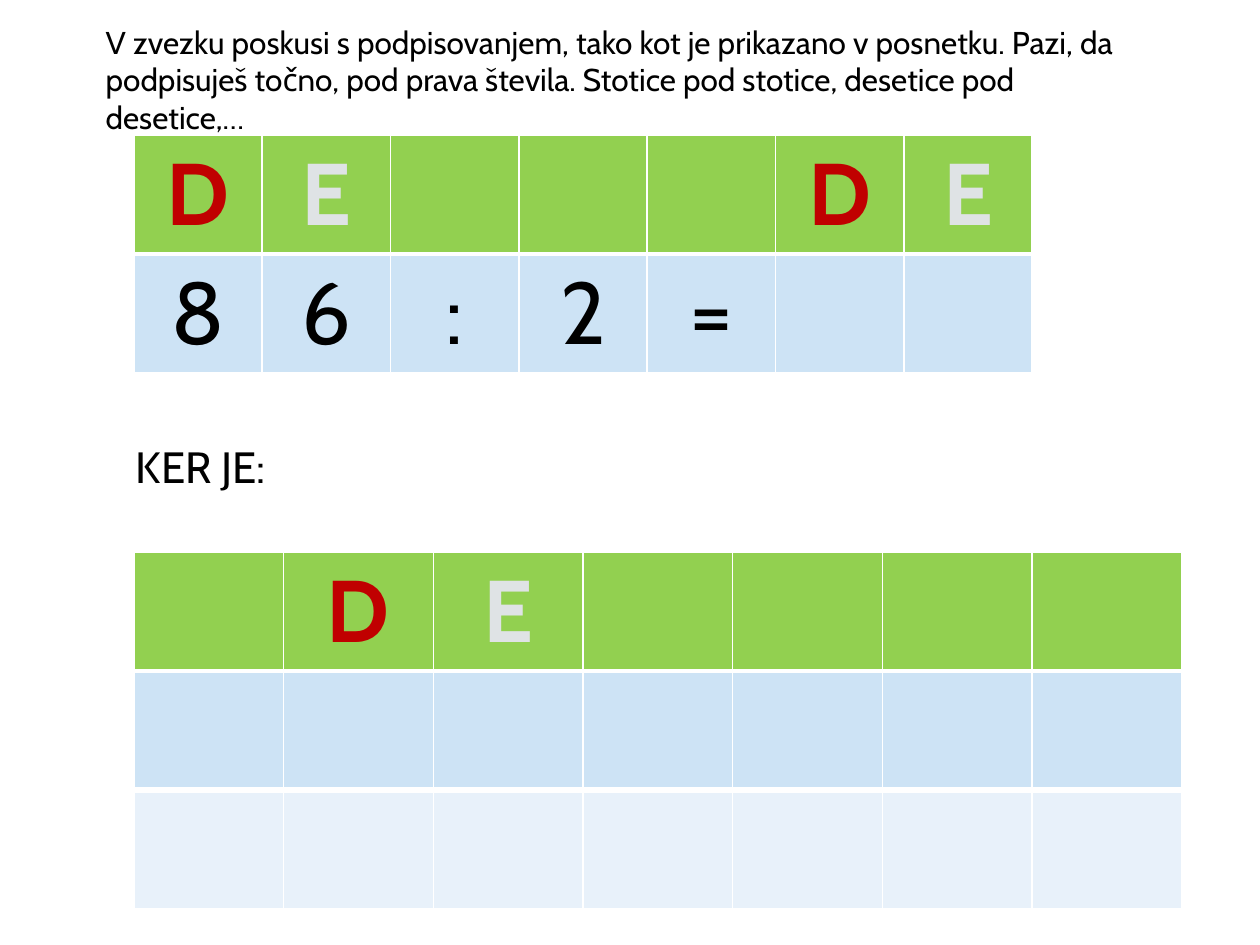
from dataclasses import dataclass

from lxml.etree import SubElement
from pptx import Presentation
from pptx.dml.color import RGBColor as RGB
from pptx.enum.shapes import MSO_CONNECTOR as CONNECTOR
from pptx.enum.text import MSO_ANCHOR as ANCHOR, PP_ALIGN as ALIGN
from pptx.oxml.ns import qn
from pptx.util import Pt


@dataclass(frozen=True)
class Theme:
    font: str = "Cabin"
    text: str = "000000"
    tens: str = "C00000"
    ones: str = "DFE3E5"
    header: str = "92D050"
    bands: tuple = ("CDE3F5", "E8F1FA")
    rule: str = "FFFFFF"
    thin: float = 1
    thick: float = 3
    body_size: float = 18
    label_size: float = 25
    digit_size: float = 50


THEME = Theme()
HEADER_COLORS = {"D": THEME.tens, "E": THEME.ones}


def add_run(p, text, size, color, bold=False):
    r = p.add_run()
    r.text = text
    r.font.name = THEME.font
    r.font.size = Pt(size)
    r.font.bold = bold
    r.font.color.rgb = RGB.from_string(color)


def add_text(slide, box, text, size):
    tf = slide.shapes.add_textbox(*map(Pt, box)).text_frame
    tf.word_wrap = True
    add_run(tf.paragraphs[0], text, size, THEME.text)


def set_borders(cell, top, bottom):
    tc_pr = cell._tc.get_or_add_tcPr()
    widths = {"lnL": THEME.thin, "lnR": THEME.thin, "lnT": top, "lnB": bottom}
    for side, width in widths.items():
        ln = SubElement(tc_pr, qn(f"a:{side}"), w=str(Pt(width)))
        fill = SubElement(ln, qn("a:solidFill"))
        SubElement(fill, qn("a:srgbClr"), val=THEME.rule)


def add_place_value_table(slide, box, rows):
    n_rows, n_cols = len(rows), len(rows[0])
    table = slide.shapes.add_table(n_rows, n_cols, *map(Pt, box)).table
    for col in table.columns:
        col.width = Pt(box[2] / n_cols)
    for i, row in enumerate(rows):
        table.rows[i].height = Pt(box[3] / n_rows)
        is_header = i == 0
        fill = THEME.header if is_header else THEME.bands[(i - 1) % 2]
        top = THEME.thick if i == 1 else THEME.thin
        bottom = THEME.thick if is_header else THEME.thin
        for j, text in enumerate(row):
            cell = table.cell(i, j)
            set_borders(cell, top, bottom)
            cell.fill.solid()
            cell.fill.fore_color.rgb = RGB.from_string(fill)
            cell.vertical_anchor = ANCHOR.TOP
            if text.strip():
                p = cell.text_frame.paragraphs[0]
                p.alignment = ALIGN.CENTER
                color = HEADER_COLORS.get(text, THEME.text)
                add_run(p, text, THEME.digit_size, color, is_header)


def add_rule(slide, x1, x2, y):
    line = slide.shapes.add_connector(
        CONNECTOR.STRAIGHT, Pt(x1), Pt(y), Pt(x2), Pt(y))
    line.line.color.rgb = RGB.from_string(THEME.rule)
    line.line.width = Pt(THEME.thick)
    SubElement(line._element.spPr, qn("a:effectLst"))


def main():
    prs = Presentation()
    prs.slide_width, prs.slide_height = Pt(720), Pt(540)
    slide = prs.slides.add_slide(prs.slide_layouts[6])
    add_place_value_table(slide, (76.5, 77.2, 513.4, 136), ["DE   DE", "86:2=  "])
    add_place_value_table(slide, (76.5, 315.5, 599, 204),
                          [" DE    ", " " * 7, " " * 7])
    add_text(slide, (70.6, 247.7, 134.6, 37.4), "KER JE:", THEME.label_size)
    add_rule(slide, 54, 689, 451.4)
    add_text(
        slide, (53.3, 9.4, 612.7, 51.1),
        "V zvezku poskusi s podpisovanjem, tako kot je prikazano v posnetku. "
        "Pazi, da podpisuješ točno, pod prava števila. Stotice pod stotice, "
        "desetice pod desetice,…", THEME.body_size)
    prs.save("out.pptx")


if __name__ == "__main__":
    main()
